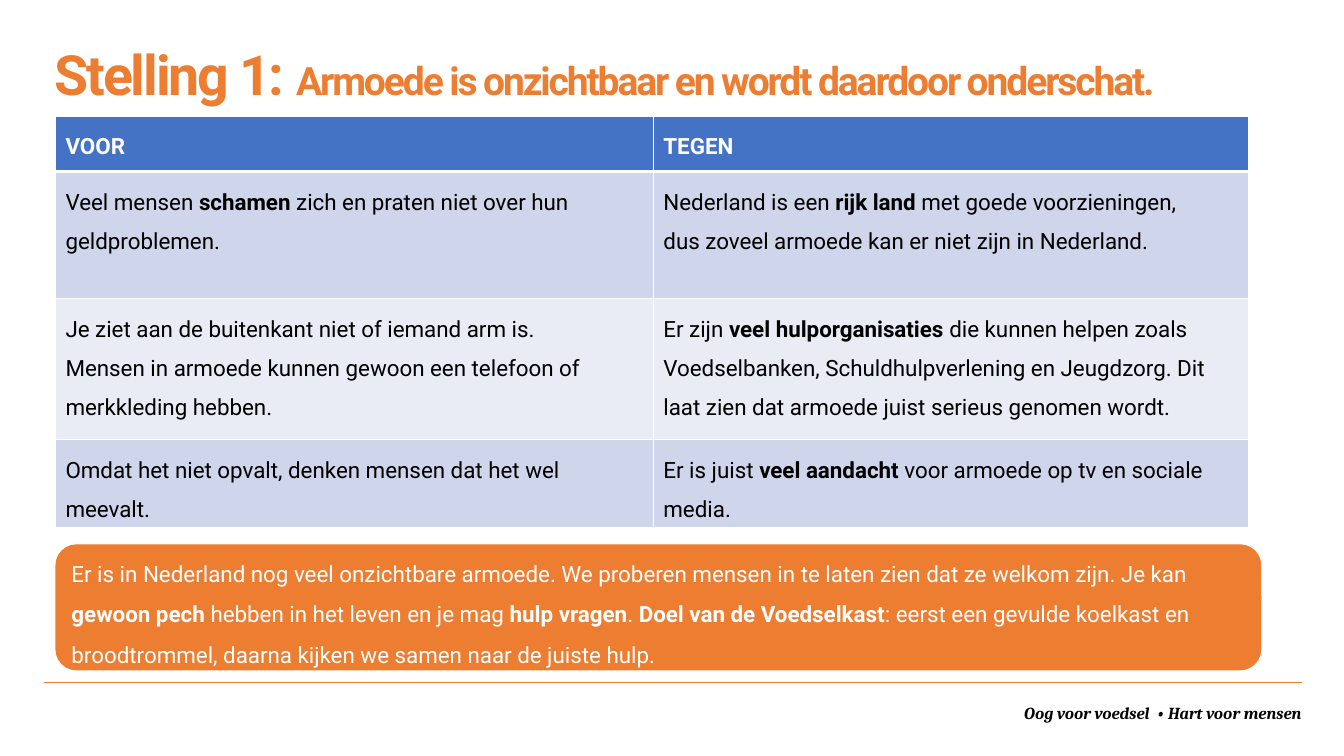
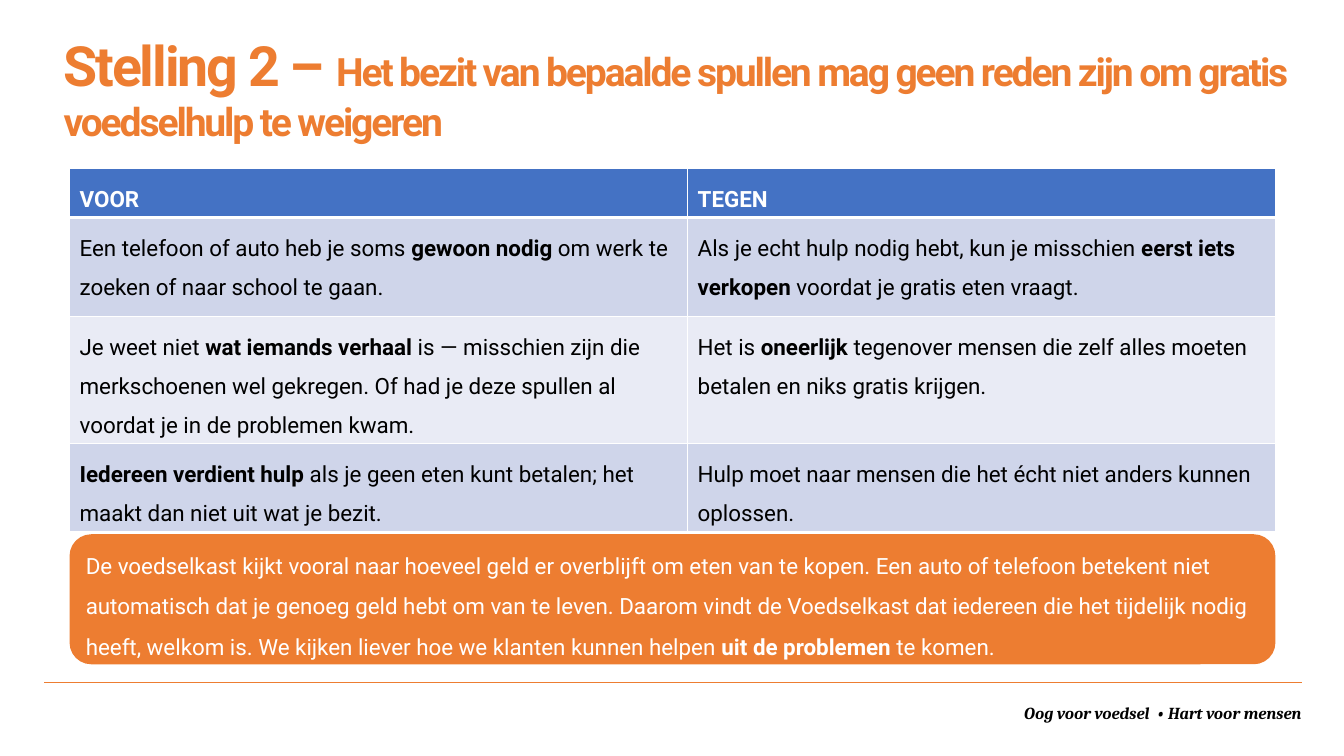
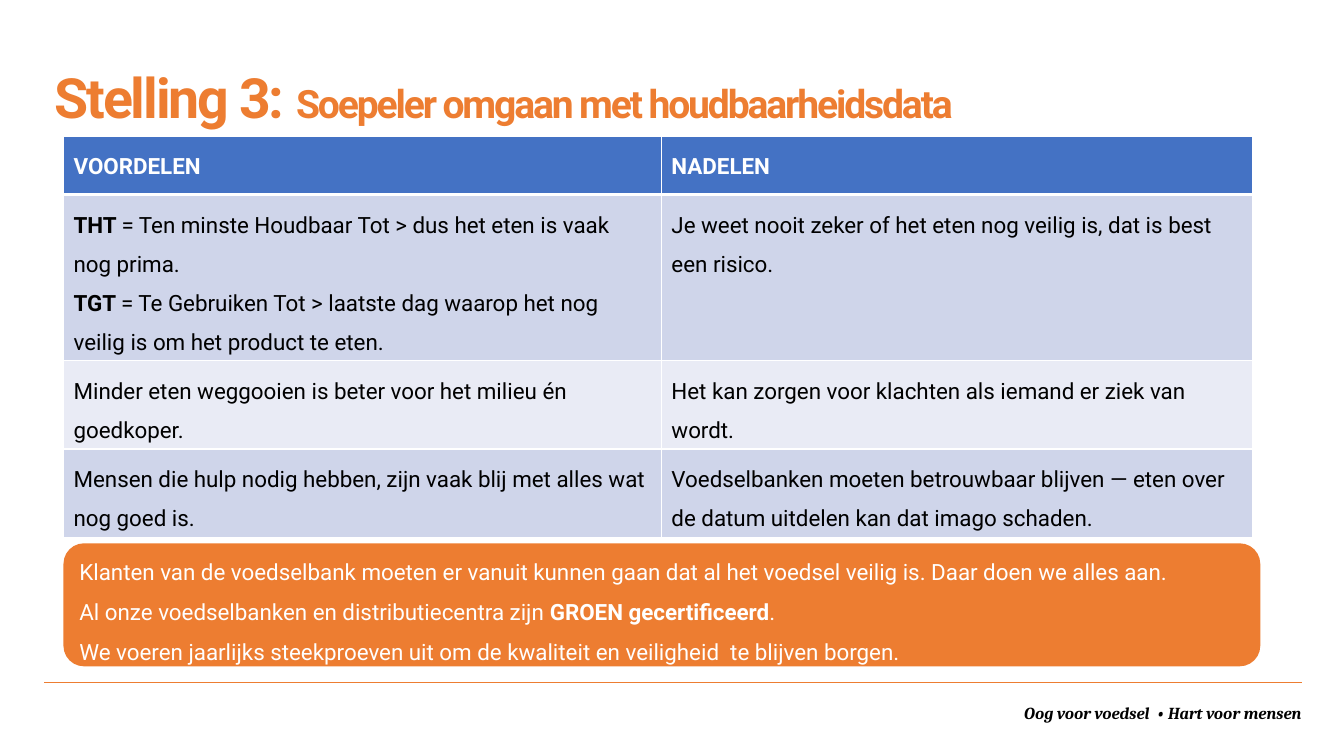
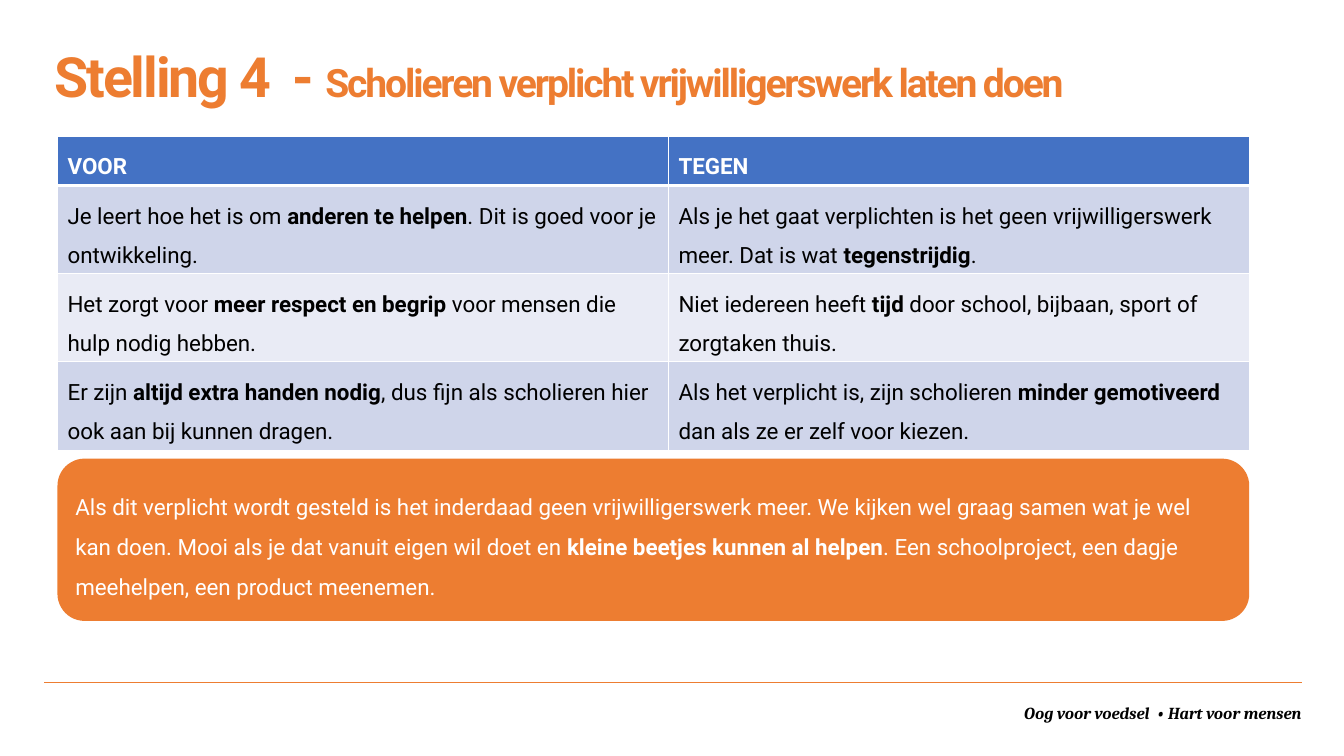
from copy import deepcopy
from dataclasses import dataclass

from lxml import etree
from pptx import Presentation
from pptx.dml.color import RGBColor
from pptx.enum import shapes, text
from pptx.oxml import ns
from pptx.util import Inches, Pt

ORANGE = RGBColor(0xED, 0x7D, 0x31)
BLUE = RGBColor(0x44, 0x72, 0xC4)
BAND_DARK = RGBColor(0xCF, 0xD5, 0xEA)
BAND_LIGHT = RGBColor(0xE9, 0xEB, 0xF5)
WHITE = RGBColor(0xFF, 0xFF, 0xFF)
BLACK = RGBColor(0, 0, 0)

TITLE_LARGE = {"name": "Roboto", "size": Pt(39.6), "bold": True}
TITLE_SMALL = {**TITLE_LARGE, "size": Pt(27.9)}
BODY = {"name": "Roboto", "size": Pt(16), "bold": False}
FOOTER = {"name": "Cambria", "size": Pt(12), "bold": True, "italic": True}
SLOGAN = "Oog voor voedsel  • Hart voor mensen"


@dataclass
class Area:
    left: float
    top: float
    width: float
    height: float

    def lengths(self) -> list:
        return [Inches(n) for n in (self.left, self.top, self.width, self.height)]


@dataclass
class Statement:
    label: str
    claim: str
    columns: list[float]
    heights: list[float]
    rows: list[tuple[str, str]]
    corner: tuple[float, float]
    answer: str
    answer_area: Area
    title_area: Area
    title_spacing: float = 1.5
    title_break: bool = False


TITLE_AREA = Area(0.44, 0.43, 12.47, 0.72)

STATEMENTS = [
    Statement(
        label="Stelling 1: ",
        claim="Armoede is onzichtbaar en wordt daardoor onderschat.",
        columns=[5.93, 5.9],
        heights=[0.55, 1.26, 1.4, 0.87],
        rows=[
            ("VOOR", "TEGEN"),
            ("Veel mensen** schamen **zich en praten niet over hun geldproblemen.",
             "Nederland is een **rijk land **met goede voorzieningen,\v"
             "dus zoveel armoede kan er niet zijn in Nederland."),
            ("Je ziet aan de buitenkant niet of iemand arm is.\n"
             "Mensen in armoede kunnen gewoon een telefoon of merkkleding hebben.",
             "Er zijn **veel hulporganisaties **die kunnen helpen zoals Voedselbanken, "
             "Schuldhulpverlening en Jeugdzorg. Dit laat zien dat armoede juist serieus "
             "genomen wordt."),
            ("Omdat het niet opvalt, denken mensen dat het wel meevalt.",
             "Er is juist **veel aandacht **voor armoede op tv en sociale media."),
        ],
        corner=(0.55, 1.15),
        answer="Er is in Nederland nog veel onzichtbare armoede. We proberen mensen in te "
               "laten zien dat ze welkom zijn. Je kan **gewoon pech **hebben in het leven en "
               "je mag **hulp vragen**. **Doel van de Voedselkast**: eerst een gevulde "
               "koelkast en broodtrommel, daarna kijken we samen naar de juiste hulp.",
        answer_area=Area(0.55, 5.4, 11.96, 1.25),
        title_area=TITLE_AREA,
        title_break=True,
    ),
    Statement(
        label="Stelling 2 – ",
        claim="Het bezit van bepaalde spullen mag geen reden zijn om gratis voedselhulp "
              "te weigeren",
        columns=[6.13, 5.83],
        heights=[0.48, 0.98, 1.26, 0.87],
        rows=[
            ("VOOR", "TEGEN"),
            ("Een telefoon of auto heb je soms **gewoon nodig** om werk te zoeken of naar "
             "school te gaan.",
             "Als je echt hulp nodig hebt, kun je misschien **eerst iets verkopen** voordat "
             "je gratis eten vraagt."),
            ("Je weet niet** wat iemands verhaal **is — misschien zijn die merkschoenen wel "
             "gekregen. Of had je deze spullen al voordat je in de problemen kwam.",
             "Het is **oneerlijk **tegenover mensen die zelf alles moeten betalen en niks "
             "gratis krijgen."),
            ("**Iedereen verdient hulp **als je geen eten kunt betalen; het maakt dan niet "
             "uit wat je bezit.",
             "Hulp moet naar mensen die het écht niet anders kunnen oplossen."),
        ],
        corner=(0.69, 1.67),
        answer="De voedselkast kijkt vooral naar hoeveel geld er overblijft om eten van te "
               "kopen. Een auto of telefoon betekent niet automatisch dat je genoeg geld hebt "
               "om van te leven. Daarom vindt de Voedselkast dat iedereen die het tijdelijk "
               "nodig heeft, welkom is. We kijken liever hoe we klanten kunnen helpen "
               "**uit de problemen** te komen.",
        answer_area=Area(0.69, 5.3, 11.96, 1.29),
        title_area=Area(0.53, 0.74, 12.47, 0.72),
        title_spacing=1.0,
        title_break=True,
    ),
    Statement(
        label="Stelling 3: ",
        claim="Soepeler omgaan met houdbaarheidsdata",
        columns=[5.93, 5.86],
        heights=[0.58, 1.64, 0.87, 0.87],
        rows=[
            ("VOORDELEN", "NADELEN"),
            ("**THT **= Ten minste Houdbaar Tot > dus het eten is vaak nog prima.\n"
             "**TGT **= Te Gebruiken Tot > laatste dag waarop het nog veilig is om het "
             "product te eten.",
             "Je weet nooit zeker of het eten nog veilig is, dat is best een risico."),
            ("Minder eten weggooien is beter voor het milieu én goedkoper.",
             "Het kan zorgen voor klachten als iemand er ziek van wordt."),
            ("Mensen die hulp nodig hebben, zijn vaak blij met alles wat nog goed is.",
             "Voedselbanken moeten betrouwbaar blijven — eten over de datum uitdelen kan "
             "dat imago schaden."),
        ],
        corner=(0.63, 1.35),
        answer="Klanten van de voedselbank moeten er vanuit kunnen gaan dat al het voedsel "
               "veilig is. Daar doen we alles aan.\n"
               "Al onze voedselbanken en distributiecentra zijn **GROEN gecertificeerd**.\n"
               "We voeren jaarlijks steekproeven uit om de kwaliteit en veiligheid  te "
               "blijven borgen.",
        answer_area=Area(0.63, 5.39, 11.87, 1.22),
        title_area=TITLE_AREA,
    ),
    Statement(
        label="Stelling 4  - ",
        claim="Scholieren verplicht vrijwilligerswerk laten doen",
        columns=[6.06, 5.76],
        heights=[0.49, 0.87, 0.87, 0.87],
        rows=[
            ("VOOR", "TEGEN"),
            ("Je leert hoe het is om **anderen te helpen**. Dit is goed voor je "
             "ontwikkeling.",
             "Als je het gaat verplichten is het geen vrijwilligerswerk meer. Dat is wat "
             "**tegenstrijdig**."),
            ("Het zorgt voor **meer respect en begrip **voor mensen die hulp nodig hebben.",
             "Niet iedereen heeft **tijd** door school, bijbaan, sport of zorgtaken thuis."),
            ("Er zijn **altijd extra handen nodig**, dus fijn als scholieren hier ook aan "
             "bij kunnen dragen.",
             "Als het verplicht is, zijn scholieren **minder gemotiveerd **dan als ze er "
             "zelf voor kiezen."),
        ],
        corner=(0.57, 1.35),
        answer="Als dit verplicht wordt gesteld is het inderdaad geen vrijwilligerswerk meer. "
               "We kijken wel graag samen wat je wel kan doen. Mooi als je dat vanuit eigen "
               "wil doet en **kleine beetjes kunnen al helpen**. Een schoolproject, een dagje "
               "meehelpen, een product meenemen.",
        answer_area=Area(0.57, 4.55, 11.82, 1.61),
        title_area=TITLE_AREA,
        title_spacing=0.9,
    ),
]


def add_span(para, words: str, style: dict, color: RGBColor):
    span = para.add_run()
    span.text = words
    for name, value in style.items():
        setattr(span.font, name, value)
    span.font.color.rgb = color
    return span


def add_break(para, span) -> None:
    para.add_line_break()
    para._p[-1].append(deepcopy(span._r.get_or_add_rPr()))


def write_marked(frame, content: str, color: RGBColor, heading: bool = False) -> None:
    for index, line in enumerate(content.split("\n")):
        para = frame.add_paragraph() if index else frame.paragraphs[0]
        para.alignment = text.PP_ALIGN.LEFT
        para.line_spacing = 1.5
        for order, part in enumerate(line.split("**")):
            style = {**BODY, "bold": heading or order % 2 == 1}
            span = None
            for piece in part.split("\v"):
                if span is not None:
                    add_break(para, span)
                if piece:
                    span = add_span(para, piece, style, color)


def write_title(page, statement: Statement) -> None:
    title = page.shapes.title
    title.left, title.top, title.width, title.height = statement.title_area.lengths()
    frame = title.text_frame
    for name, value in {"word_wrap": True, "auto_size": text.MSO_AUTO_SIZE.NONE,
                        "vertical_anchor": text.MSO_ANCHOR.MIDDLE}.items():
        setattr(frame, name, value)
    para = frame.paragraphs[0]
    para.alignment = text.PP_ALIGN.LEFT
    para.line_spacing = statement.title_spacing
    for words, style in ((statement.label, TITLE_LARGE), (statement.claim, TITLE_SMALL)):
        span = add_span(para, words, style, ORANGE)
        span._r.get_or_add_rPr().set("spc", "-150")
    if statement.title_break:
        add_break(para, span)
        ending = etree.SubElement(para._p, ns.qn("a:endParaRPr"))
        ending.set("sz", "2790")


def add_borders(cell, bottom: float) -> None:
    properties = cell._tc.get_or_add_tcPr()
    widths = {"a:lnL": 1, "a:lnR": 1, "a:lnT": 1, "a:lnB": bottom}
    for index, (tag, width) in enumerate(widths.items()):
        edge = etree.Element(ns.qn(tag), w=str(Pt(width)))
        fill = etree.SubElement(edge, ns.qn("a:solidFill"))
        etree.SubElement(fill, ns.qn("a:srgbClr"), val=str(WHITE))
        properties.insert(index, edge)


def add_arguments(page, statement: Statement) -> None:
    area = Area(*statement.corner, sum(statement.columns), sum(statement.heights))
    table = page.shapes.add_table(
        len(statement.rows), len(statement.columns), *area.lengths()).table
    for column, width in zip(table.columns, statement.columns):
        column.width = Inches(width)
    for index, (row, height) in enumerate(zip(table.rows, statement.heights)):
        row.height = Inches(height)
        heading = index == 0
        band = BLUE if heading else BAND_DARK if index % 2 else BAND_LIGHT
        for cell, content in zip(row.cells, statement.rows[index]):
            cell.fill.solid()
            cell.fill.fore_color.rgb = band
            add_borders(cell, 3 if heading else 1)
            write_marked(cell.text_frame, content, WHITE if heading else BLACK, heading)


def add_answer(page, statement: Statement) -> None:
    box = page.shapes.add_shape(
        shapes.MSO_SHAPE.ROUNDED_RECTANGLE, *statement.answer_area.lengths())
    box.shadow.inherit = False
    box.fill.solid()
    box.fill.fore_color.rgb = ORANGE
    box.line.fill.background()
    box.text_frame.word_wrap = True
    box.text_frame.vertical_anchor = text.MSO_ANCHOR.MIDDLE
    write_marked(box.text_frame, statement.answer, WHITE)


def move_footer_to_layout(page, layout) -> None:
    rule = page.shapes.add_connector(
        shapes.MSO_CONNECTOR.STRAIGHT,
        Inches(0.44), Inches(6.77), Inches(12.91), Inches(6.77))
    rule.line.color.rgb = ORANGE
    rule.line.width = Pt(1)
    etree.SubElement(rule._element.spPr, ns.qn("a:effectLst"))
    footer = page.shapes.add_textbox(*Area(9.87, 6.92, 3.14, 0.3).lengths())
    footer.text_frame.word_wrap = True
    footer.text_frame.auto_size = text.MSO_AUTO_SIZE.SHAPE_TO_FIT_TEXT
    para = footer.text_frame.paragraphs[0]
    para.alignment = text.PP_ALIGN.RIGHT
    add_span(para, SLOGAN, FOOTER, BLACK)
    for item in (rule, footer):
        layout.shapes.element.append(item._element)


def main() -> None:
    deck = Presentation()
    deck.slide_width, deck.slide_height = Inches(13.33), Inches(7.5)
    layout = deck.slide_layouts[5]
    for index, statement in enumerate(STATEMENTS):
        page = deck.slides.add_slide(layout)
        if index == 0:
            move_footer_to_layout(page, layout)
        write_title(page, statement)
        add_arguments(page, statement)
        add_answer(page, statement)
    deck.save("out.pptx")


if __name__ == "__main__":
    main()
